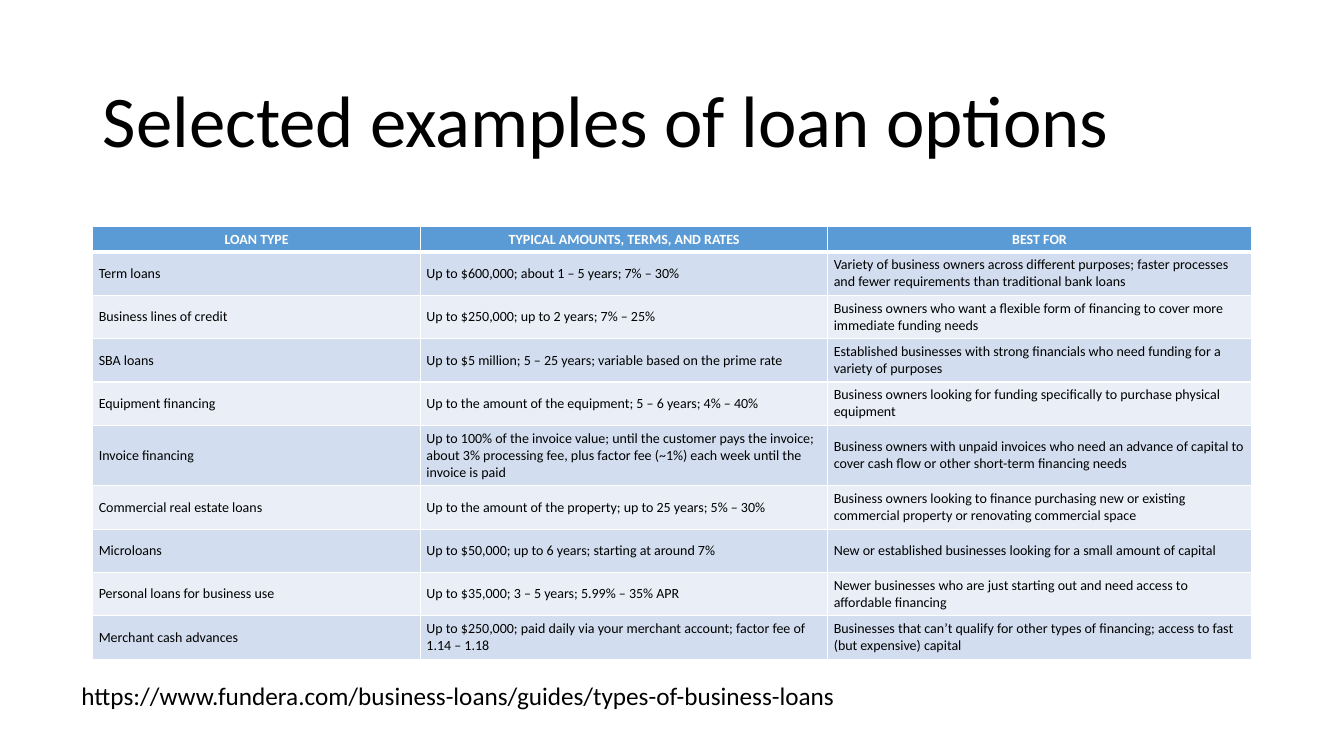
from dataclasses import dataclass
from lxml import etree
from pptx import Presentation
from pptx.dml.color import RGBColor
from pptx.enum import text as enum
from pptx.oxml.ns import qn
from pptx.util import Inches, Pt


@dataclass(frozen=True)
class Theme:
    font: str = "Calibri"
    ink: str = "000000"
    white: str = "FFFFFF"
    head: str = "5B9BD5"
    bands: tuple = ("D2DEEF", "EAEFF7")
    title: int = 52
    link: int = 18
    cell: int = 10
    thin: int = 1
    thick: int = 3


LEFT, MID = enum.PP_ALIGN.LEFT, enum.PP_ALIGN.CENTER
COLS = (3.25, 4.04, 4.2)
ROW, HEAD_ROW, TALL_ROW = 0.43, 0.25, 0.6
TALL = "Invoice financing"
HEADS = ("LOAN TYPE", "TYPICAL AMOUNTS, TERMS, AND RATES", "BEST FOR")
LOANS = (
    ("Term loans", "Up to $600,000; about 1 – 5 years; 7% – 30%",
     "Variety of business owners across different purposes; faster processes "
     "and fewer requirements than traditional bank loans"),
    ("Business lines of credit", "Up to $250,000; up to 2 years; 7% – 25%",
     "Business owners who want a flexible form of financing to cover more "
     "immediate funding needs"),
    ("SBA loans",
     "Up to $5 million; 5 – 25 years; variable based on the prime rate",
     "Established businesses with strong financials who need funding for a "
     "variety of purposes"),
    ("Equipment financing",
     "Up to the amount of the equipment; 5 – 6 years; 4% – 40%",
     "Business owners looking for funding specifically to purchase physical "
     "equipment"),
    (TALL,
     "Up to 100% of the invoice value; until the customer pays the invoice; "
     "about 3% processing fee, plus factor fee (~1%) each week until the "
     "invoice is paid",
     "Business owners with unpaid invoices who need an advance of capital to "
     "cover cash flow or other short-term financing needs"),
    ("Commercial real estate loans",
     "Up to the amount of the property; up to 25 years; 5% – 30%",
     "Business owners looking to finance purchasing new or existing "
     "commercial property or renovating commercial space"),
    ("Microloans", "Up to $50,000; up to 6 years; starting at around 7%",
     "New or established businesses looking for a small amount of capital"),
    ("Personal loans for business use",
     "Up to $35,000; 3 – 5 years; 5.99% – 35% APR",
     "Newer businesses who are just starting out and need access to "
     "affordable financing"),
    ("Merchant cash advances",
     "Up to $250,000; paid daily via your merchant account; factor fee of "
     "1.14 – 1.18",
     "Businesses that can’t qualify for other types of financing; access to "
     "fast (but expensive) capital"),
)


def apply(item, values):
    """Set each named attribute on the item."""
    for name, value in values.items():
        setattr(item, name, value)


def place(*box):
    """Turn left, top, width and height in inches into named lengths."""
    return dict(zip(("left", "top", "width", "height"), map(Inches, box)))


class Deck:
    def __init__(self, theme):
        self.theme = theme
        self.prs = Presentation()
        apply(self.prs, {"slide_width": Inches(13.33),
                         "slide_height": Inches(7.5)})
        self.slide = self.prs.slides.add_slide(self.prs.slide_layouts[5])

    def label(self, frame, words, size, color, bold=False, align=LEFT):
        frame.text = words
        para = frame.paragraphs[0]
        para.alignment = align
        font = para.runs[0].font
        apply(font, {"name": self.theme.font, "size": Pt(size), "bold": bold})
        font.color.rgb = RGBColor.from_string(color)
        return para

    def title(self, words, box):
        shape = self.slide.shapes.title
        apply(shape, place(*box))
        frame = shape.text_frame
        apply(frame, {"word_wrap": True, "auto_size": enum.MSO_AUTO_SIZE.NONE,
                      "vertical_anchor": enum.MSO_ANCHOR.MIDDLE})
        para = self.label(frame, words, self.theme.title, self.theme.ink)
        para.line_spacing = 0.9

    def text(self, words, box):
        frame = self.slide.shapes.add_textbox(**place(*box)).text_frame
        apply(frame, {"word_wrap": True,
                      "auto_size": enum.MSO_AUTO_SIZE.SHAPE_TO_FIT_TEXT})
        self.label(frame, words, self.theme.link, self.theme.ink)

    def edge(self, cell, side, width):
        """Draw one border; fills must be set after all borders."""
        line = etree.SubElement(cell._tc.get_or_add_tcPr(), qn("a:ln" + side),
                                w=str(Pt(width)))
        fill = etree.SubElement(line, qn("a:solidFill"))
        etree.SubElement(fill, qn("a:srgbClr"), val=self.theme.white)

    def cell(self, cell, words, row):
        look, top = self.theme, row == 0
        apply(cell, {"margin_left": Inches(0.06), "margin_right": Inches(0.06),
                     "margin_top": Inches(0.03), "margin_bottom": Inches(0.03),
                     "vertical_anchor": enum.MSO_ANCHOR.MIDDLE})
        self.label(cell.text_frame, words, look.cell,
                   look.white if top else look.ink, top, MID if top else LEFT)
        heavy = {0: "B", 1: "T"}.get(row)
        for side in "LRTB":
            self.edge(cell, side, look.thick if side == heavy else look.thin)
        cell.fill.solid()
        color = look.head if top else look.bands[(row - 1) % 2]
        cell.fill.fore_color.rgb = RGBColor.from_string(color)

    def table(self, heads, rows, box):
        grid = self.slide.shapes.add_table(len(rows) + 1, len(heads),
                                           **place(*box)).table
        for col, width in zip(grid.columns, COLS):
            col.width = Inches(width)
        for r, line in enumerate((heads, *rows)):
            high = TALL_ROW if line[0] == TALL else ROW if r else HEAD_ROW
            grid.rows[r].height = Inches(high)
            for c, words in enumerate(line):
                self.cell(grid.cell(r, c), words, r)


def main():
    deck = Deck(Theme())
    deck.title("Selected examples of loan options", (0.92, 0.61, 11.5, 1.24))
    deck.table(HEADS, LOANS, (0.92, 2.25, 11.5, 4.25))
    deck.text("https://www.fundera.com/business-loans/guides/"
              "types-of-business-loans", (0.71, 6.7, 9.06, 0.4))
    deck.prs.save("out.pptx")


if __name__ == "__main__":
    main()
